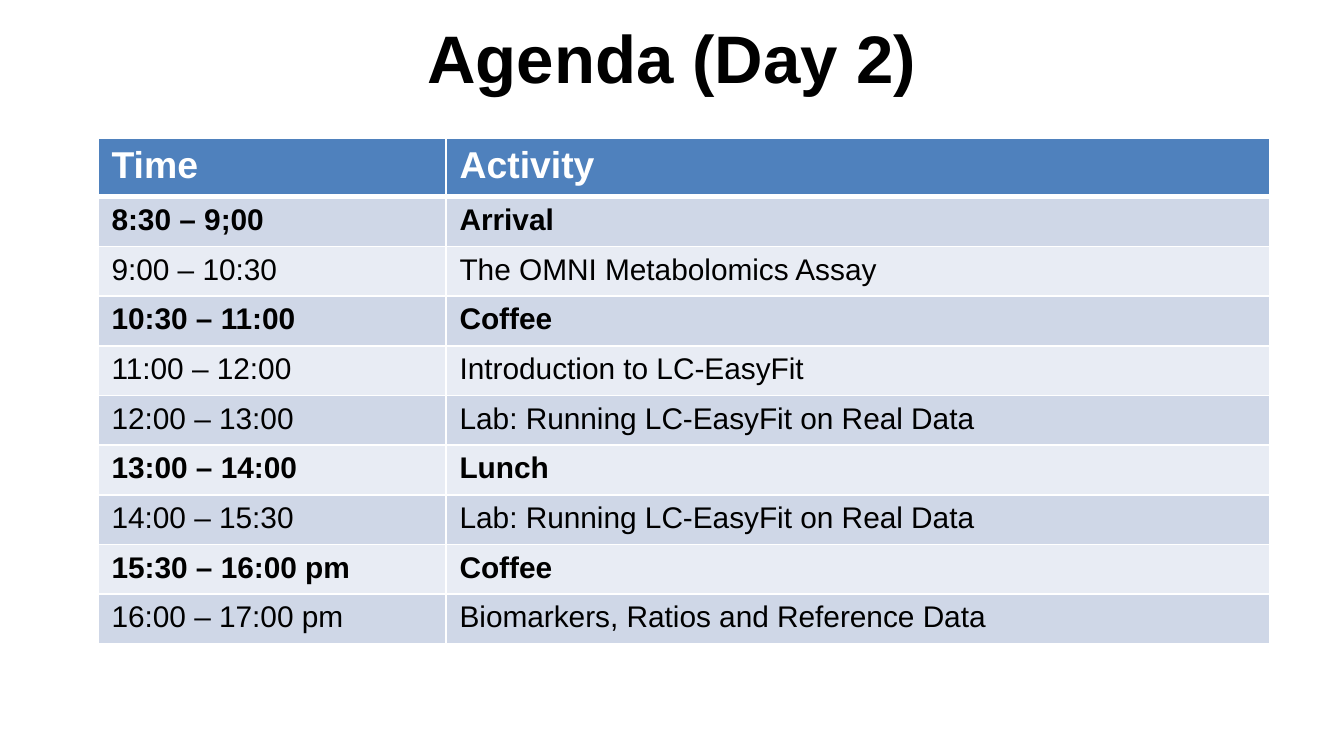
from lxml.etree import SubElement
from pptx import Presentation
from pptx.dml.color import RGBColor
from pptx.enum.text import MSO_ANCHOR as Anchor, PP_ALIGN as Align
from pptx.oxml.ns import qn
from pptx.util import Inches, Pt

BLACK = RGBColor(0x00, 0x00, 0x00)
WHITE = RGBColor(0xFF, 0xFF, 0xFF)
HEADER_BLUE = RGBColor(0x4F, 0x81, 0xBD)
BANDS = (RGBColor(0xCF, 0xD7, 0xE7), RGBColor(0xE8, 0xEC, 0xF4))

FONT = "Arial"
SLIDE_WIDTH = 10
COLUMN_WIDTHS = (2.59, 6.13)
HEADER_HEIGHT = 0.43
SESSION_HEIGHT = 0.37
BREAKS = {"Arrival", "Coffee", "Lunch"}
HEADINGS = ("Time", "Activity")
SESSIONS = (
    ("8:30 – 9;00", "Arrival"),
    ("9:00 – 10:30", "The OMNI Metabolomics Assay"),
    ("10:30 – 11:00", "Coffee"),
    ("11:00 – 12:00", "Introduction to LC-EasyFit"),
    ("12:00 – 13:00", "Lab: Running LC-EasyFit on Real Data"),
    ("13:00 – 14:00", "Lunch"),
    ("14:00 – 15:30", "Lab: Running LC-EasyFit on Real Data"),
    ("15:30 – 16:00 pm", "Coffee"),
    ("16:00 – 17:00 pm", "Biomarkers, Ratios and Reference Data"),
)


def add_run(paragraph, text, size, color, bold):
    """Append one formatted run to a paragraph."""
    run = paragraph.add_run()
    run.text = text
    run.font.name = FONT
    run.font.size = Pt(size)
    run.font.bold = bold
    run.font.color.rgb = color


def add_title(slide, text):
    """Add the centred slide title."""
    title = slide.shapes.add_textbox(Inches(0.5), Inches(-0.05), Inches(9), Inches(0.94))
    frame = title.text_frame
    frame.word_wrap = True
    frame.vertical_anchor = Anchor.MIDDLE
    heading = frame.paragraphs[0]
    heading.alignment = Align.CENTER
    add_run(heading, text, 36, BLACK, True)


def add_borders(cell, top=1, bottom=1):
    """Give a cell white borders of the stated point widths."""
    properties = cell._tc.get_or_add_tcPr()
    for side, width in (("L", 1), ("R", 1), ("T", top), ("B", bottom)):
        border = SubElement(properties, qn(f"a:ln{side}"), w=str(Pt(width)))
        fill = SubElement(border, qn("a:solidFill"))
        SubElement(fill, qn("a:srgbClr"), val=str(WHITE))


def fill_row(row, texts, size, color, bold, background, **borders):
    """Write and style every cell of one table row."""
    for cell, text in zip(row.cells, texts):
        add_borders(cell, **borders)
        cell.fill.solid()
        cell.fill.fore_color.rgb = background
        add_run(cell.text_frame.paragraphs[0], text, size, color, bold)


def add_agenda(slide):
    """Add the agenda table with a header and banded sessions."""
    height = HEADER_HEIGHT + SESSION_HEIGHT * len(SESSIONS)
    agenda = slide.shapes.add_table(
        len(SESSIONS) + 1, len(HEADINGS),
        Inches(0.73), Inches(1.03), Inches(sum(COLUMN_WIDTHS)), Inches(height),
    ).table
    for column, width in zip(agenda.columns, COLUMN_WIDTHS):
        column.width = Inches(width)
    header, *session_rows = agenda.rows
    header.height = Inches(HEADER_HEIGHT)
    fill_row(header, HEADINGS, 20, WHITE, True, HEADER_BLUE, bottom=3)
    for index, (row, session) in enumerate(zip(session_rows, SESSIONS)):
        row.height = Inches(SESSION_HEIGHT)
        fill_row(row, session, 16, BLACK, session[1] in BREAKS,
                 BANDS[index % 2], top=1 if index else 3)


def main():
    """Build and save the agenda slide."""
    deck = Presentation()
    deck.slide_width = Inches(SLIDE_WIDTH)
    deck.slide_height = Inches(SLIDE_WIDTH * 9 / 16)
    slide = deck.slides.add_slide(deck.slide_layouts[6])
    add_title(slide, "Agenda (Day 2)")
    add_agenda(slide)
    deck.save("out.pptx")


if __name__ == "__main__":
    main()
